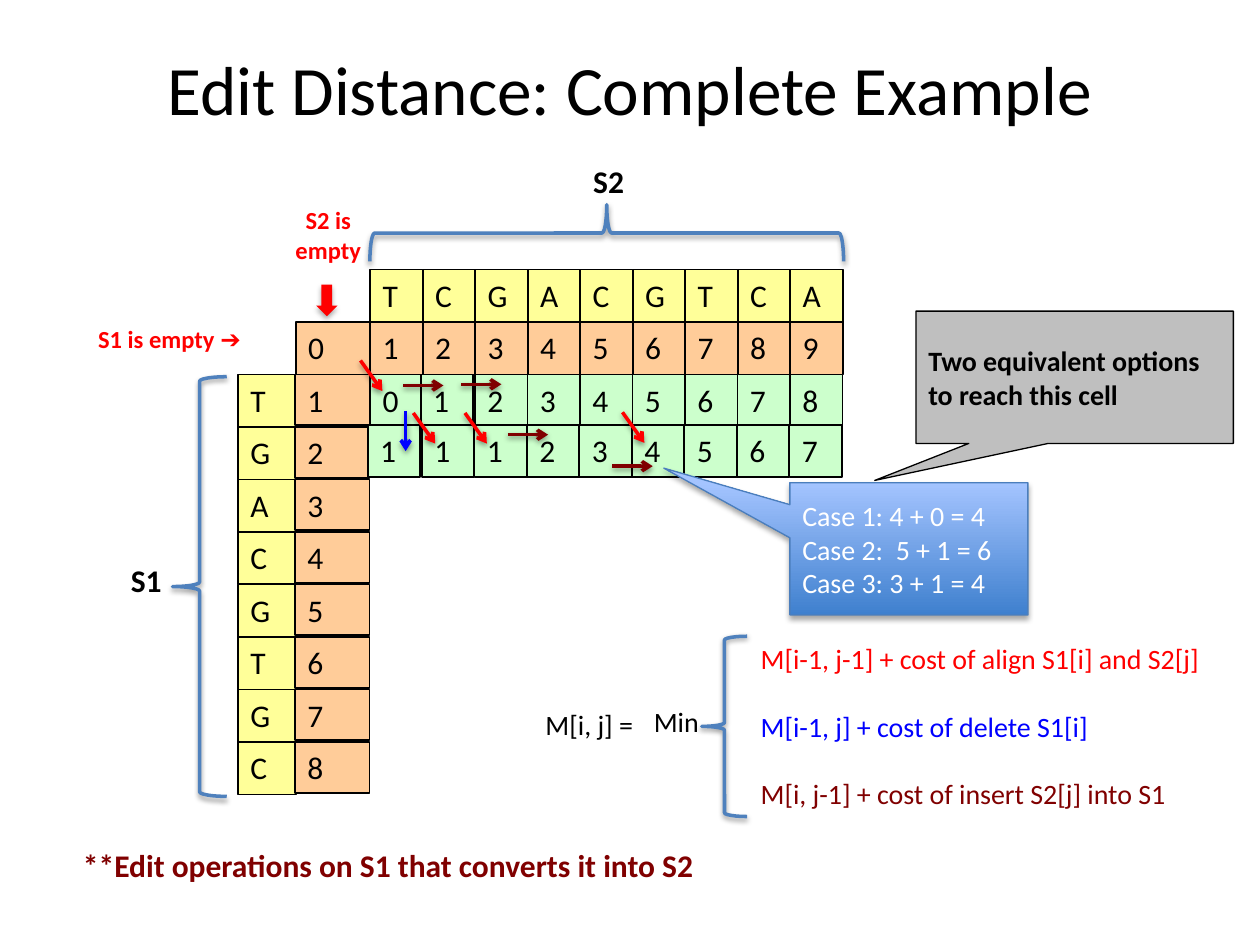
from lxml.etree import SubElement
from pptx import Presentation
from pptx.dml.color import RGBColor
from pptx.enum.shapes import MSO_CONNECTOR, MSO_SHAPE
from pptx.enum.text import MSO_ANCHOR, PP_ALIGN
from pptx.oxml.ns import qn
from pptx.util import Pt

COLORS = {
    "black": "000000", "white": "FFFFFF", "red": "FF0000", "blue": "0000FF",
    "maroon": "800000", "letter": "FFFF99", "border": "FFCC99",
    "score": "CCFFCC", "brace": "4F81BD", "gray": "BFBFBF",
    "case_line": "4B7EBC", "case_dark": "3F80CE", "case_light": "A4C4FF",
}
CELL = 30
MOVES = {
    "align": ("red", 12.5, 17.5),
    "insert": ("maroon", 23, 0),
    "delete": ("blue", 0, 23),
}


def color(name):
    """Return the named colour."""
    return RGBColor.from_string(COLORS[name])


def write(frame, text, size=18, ink="black", bold=False, align=PP_ALIGN.LEFT,
          anchor=MSO_ANCHOR.TOP, wrap=True, gap=0):
    """Fill a text frame, one paragraph per line; ink is one name or one per line."""
    frame.word_wrap = wrap
    frame.vertical_anchor = anchor
    lines = text.split("\n")
    inks = [ink] * len(lines) if isinstance(ink, str) else ink
    for index, (line, shade) in enumerate(zip(lines, inks)):
        para = frame.add_paragraph() if index else frame.paragraphs[0]
        para.alignment = align
        if index and gap:
            para.space_before = Pt(gap)
        span = para.add_run()
        span.text = line
        span.font.name = "Calibri"
        span.font.size = Pt(size)
        span.font.bold = bold
        span.font.color.rgb = color(shade)


def cast_shadow(shape, distance=1.6, opacity=38):
    """Give a shape or connector a soft shadow below it."""
    effects = SubElement(shape._element.spPr, qn("a:effectLst"))
    shadow = SubElement(effects, qn("a:outerShdw"), blurRad=str(Pt(3.1)),
                        dist=str(Pt(distance)), dir="5400000", rotWithShape="0")
    black = SubElement(shadow, qn("a:srgbClr"), val=COLORS["black"])
    SubElement(black, qn("a:alpha"), val=str(opacity * 1000))


def add_label(page, box, text, **style):
    """Add a text box."""
    label = page.shapes.add_textbox(*map(Pt, box))
    write(label.text_frame, text, wrap=False, **style)


def add_figure(page, kind, box, fill=None, line=None, width=1.0):
    """Add a preset shape with a plain fill and outline."""
    shape = page.shapes.add_shape(kind, *map(Pt, box))
    if fill:
        shape.fill.solid()
        shape.fill.fore_color.rgb = color(fill)
    else:
        shape.fill.background()
    if line:
        shape.line.color.rgb = color(line)
        shape.line.width = Pt(width)
    else:
        shape.line.fill.background()
    shape.shadow.inherit = False
    return shape


def add_brace(page, box, rotation=0):
    """Add a shadowed left brace."""
    brace = add_figure(page, MSO_SHAPE.LEFT_BRACE, box, line="brace", width=2)
    brace._element.spPr.remove(brace._element.spPr.find(qn("a:effectLst")))
    cast_shadow(brace)
    brace.rotation = rotation


def add_cells(page, left, top, labels, fill, width=CELL, height=CELL, down=False):
    """Add a row or column of evenly spaced cells, one per label."""
    for index, text in enumerate(labels):
        x = left if down else left + index * CELL
        y = top + index * CELL if down else top
        cell = add_figure(page, MSO_SHAPE.RECTANGLE, (x, y, width, height),
                          fill, "black")
        write(cell.text_frame, text)


def add_move(page, x, y, move):
    """Add the arrow of an edit move starting at a point."""
    ink, across, down = MOVES[move]
    arrow = page.shapes.add_connector(
        MSO_CONNECTOR.STRAIGHT, Pt(x), Pt(y), Pt(x + across), Pt(y + down))
    arrow.line.color.rgb = color(ink)
    arrow.line.width = Pt(2)
    SubElement(arrow.line._get_or_add_ln(), qn("a:tailEnd"), type="arrow")
    cast_shadow(arrow)


def add_title(page, box, text):
    """Place and fill the title placeholder."""
    title = page.shapes.title
    title.left, title.top, title.width, title.height = map(Pt, box)
    write(title.text_frame, text, size=39.6, align=PP_ALIGN.CENTER,
          anchor=MSO_ANCHOR.MIDDLE)


def add_matrix(page, left, top):
    """Add the distance matrix and its arrows."""
    add_cells(page, left + 75.6, top, "TCGACGTCA", "letter")
    add_cells(page, left, top + 60, "TGACGTGC", "letter", width=33, down=True)
    add_cells(page, left + 33, top + 30, "0", "border", width=42.5)
    add_cells(page, left + 75.6, top + 30, "123456789", "border")
    add_cells(page, left + 32.6, top + 60, "12345678", "border",
              width=42.5, height=29, down=True)
    for x, y, labels in ((75.6, 60, "0"), (104.5, 60, "1"), (135.5, 60, "2345678"),
                         (74.2, 88.8, "1"), (105.1, 88.8, "11234567")):
        add_cells(page, left + x, top + y, labels, "score")
    for x, y, move in (
            (70, 52, "align"), (94.4, 66.3, "insert"), (127.5, 65.6, "insert"),
            (95.8, 80.8, "delete"), (100.2, 82, "align"), (129.7, 82, "align"),
            (154.2, 94.4, "insert"), (214, 112.4, "insert"), (219.7, 81.6, "align")):
        add_move(page, left + x, top + y, move)


def add_matrix_labels(page, left, top):
    """Add the braces and names around the matrix."""
    add_brace(page, (left - 37.4, top + 61.3, 31, 239.8))
    add_brace(page, (left + 194.5, top - 156.2, 32.4, 270.7), rotation=90)
    add_label(page, (left - 68.3, top + 162.8, 35.3, 28.8), "S1", bold=True)
    add_label(page, (left + 195.9, top - 64.7, 32.4, 28.8), "S2", bold=True)
    warning = {"size": 14, "ink": "red", "bold": True}
    add_label(page, (left - 87, top + 27.4, 100, 24.5), "S1 is empty ➔", **warning)
    add_label(page, (left + 25.3, top - 40.2, 52.6, 41), "S2 is\nempty",
              align=PP_ALIGN.CENTER, **warning)
    pointer = add_figure(page, MSO_SHAPE.DOWN_ARROW,
                         (left + 44.7, top + 8.7, 12.2, 18), "red")
    pointer._element.spPr.remove(pointer._element.spPr.find(qn("a:effectLst")))
    cast_shadow(pointer, distance=1.8, opacity=35)


def add_recurrence(page, left, top):
    """Add the recurrence formula with its three cases."""
    add_label(page, (left, top + 38, 65.5, 26.6), "M[i, j] =", size=16)
    add_label(page, (left + 62, top + 36, 40.3, 26.6), "Min", size=16)
    add_brace(page, (left + 96.4, top + 0.6, 26, 103))
    add_label(page, (left + 123, top, 268.6, 104.4),
              "M[i-1, j-1] + cost of align S1[i] and S2[j]\n"
              "M[i-1, j] + cost of delete S1[i]\n"
              "M[i, j-1] + cost of insert S2[j] into S1",
              size=16, ink=["red", "blue", "maroon"], gap=19.5)


def add_callouts(page, left, top):
    """Add the case callout and the remark above it."""
    callout = MSO_SHAPE.RECTANGULAR_CALLOUT
    cases = add_figure(page, callout, (left, top + 98, 136, 75.6),
                       line="case_line", width=0.75)
    cases.adjustments[0], cases.adjustments[1] = -1.03, -0.61
    cases.fill.gradient()
    cases.fill.gradient_angle = 90
    for stop, name in zip(cases.fill.gradient_stops, ("case_dark", "case_light")):
        stop.color.rgb = color(name)
    cases._element.spPr.remove(cases._element.spPr.find(qn("a:effectLst")))
    cast_shadow(cases, distance=1.8, opacity=35)
    write(cases.text_frame, "Case 1: 4 + 0 = 4\nCase 2:  5 + 1 = 6\nCase 3: 3 + 1 = 4",
          size=16, ink="white", anchor=MSO_ANCHOR.MIDDLE)
    remark = add_figure(page, callout, (left + 72, top, 181.4, 75.6),
                        "gray", "black", 0.75)
    remark.adjustments[0], remark.adjustments[1] = -0.63, 0.78
    write(remark.text_frame, "Two equivalent options to reach this cell",
          size=16, bold=True, anchor=MSO_ANCHOR.MIDDLE)


def main():
    """Build and save the deck."""
    deck = Presentation()
    deck.slide_width, deck.slide_height = Pt(720), Pt(540)
    page = deck.slides.add_slide(deck.slide_layouts[5])
    add_title(page, (36, 21.6, 648, 57), "Edit Distance: Complete Example")
    add_matrix(page, 136, 154)
    add_matrix_labels(page, 136, 154)
    add_recurrence(page, 304.6, 363)
    add_callouts(page, 451.4, 177.8)
    add_label(page, (40.3, 480.2, 368.6, 28.8),
              "**Edit operations on S1 that converts it into S2",
              ink="maroon", bold=True)
    deck.save("out.pptx")


if __name__ == "__main__":
    main()
